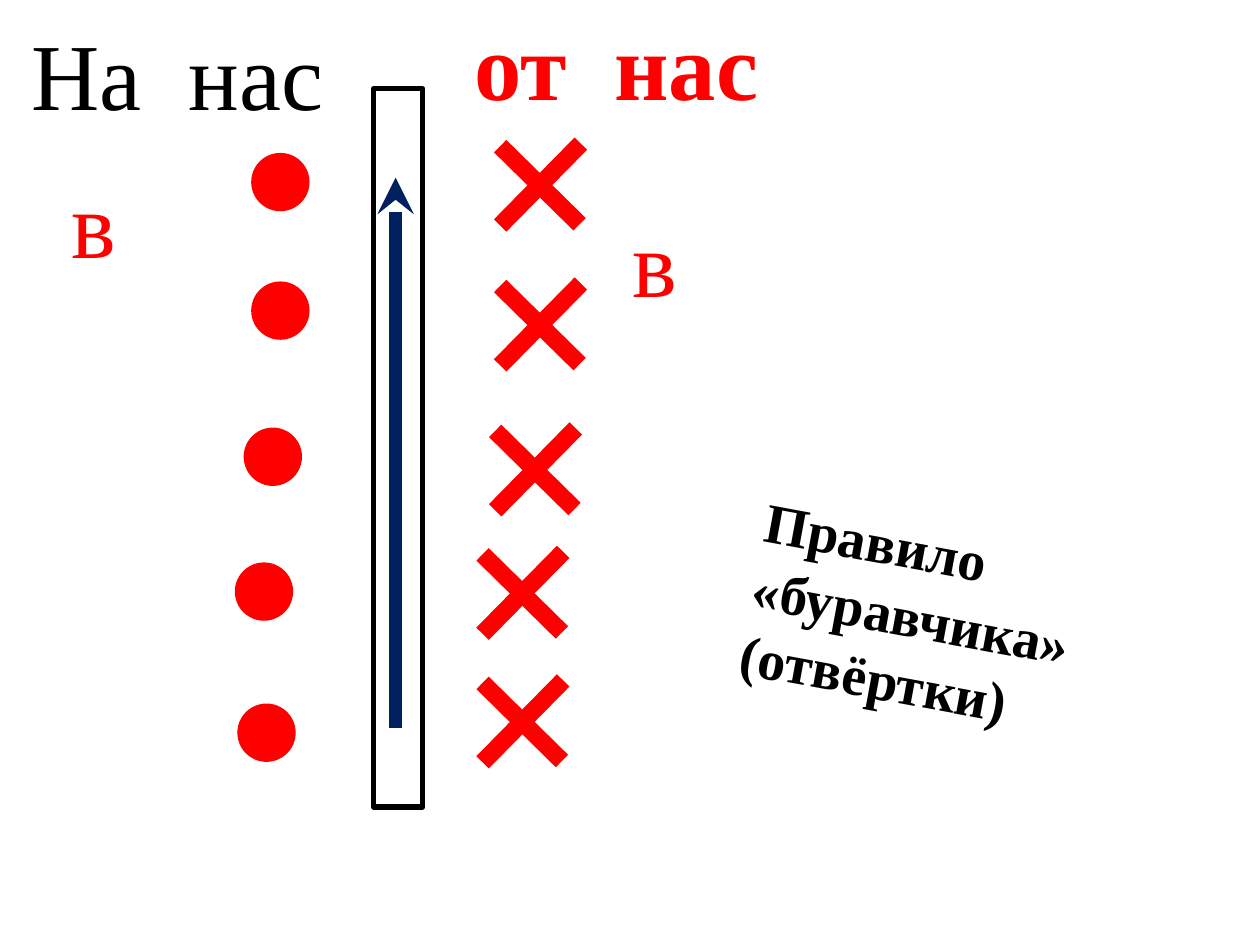
from lxml import etree
from pptx import Presentation
from pptx.dml.color import RGBColor
from pptx.enum.shapes import MSO_CONNECTOR, MSO_SHAPE
from pptx.enum.text import MSO_AUTO_SIZE
from pptx.oxml.ns import qn
from pptx.util import Inches, Pt

STRAIGHT = MSO_CONNECTOR.STRAIGHT
RECTANGLE = MSO_SHAPE.RECTANGLE
OVAL = MSO_SHAPE.OVAL
FIT_SHAPE = MSO_AUTO_SIZE.SHAPE_TO_FIT_TEXT
RED, BLACK, NAVY = "FF0000", "000000", "002060"


def color(value):
    return RGBColor.from_string(value)


def add_line(shapes, start, end, line_color, width):
    line = shapes.add_connector(STRAIGHT, *[Inches(v) for v in (*start, *end)])
    line.line.color.rgb = color(line_color)
    line.line.width = Pt(width)
    etree.SubElement(line._element.spPr, qn("a:effectLst"))
    return line


deck = Presentation()
deck.slide_width, deck.slide_height = Inches(10), Inches(7.5)
page = deck.slides.add_slide(deck.slide_layouts[6])

current = add_line(page.shapes, (3.14, 1.41), (3.14, 5.78), NAVY, 7)
etree.SubElement(current.line._get_or_add_ln(), qn("a:headEnd"), type="stealth")

wire = page.shapes.add_shape(RECTANGLE, Inches(0.31), Inches(3.36), Inches(5.7), Inches(0.39))
wire.rotation = 90
wire.shadow.inherit = False
wire.fill.background()
wire.line.color.rgb = color(BLACK)
wire.line.width = Pt(3)

for left, top in [(2.03, 2.27), (2.03, 1.25), (1.97, 3.43), (1.9, 4.5), (1.92, 5.62)]:
    dot = page.shapes.add_shape(OVAL, Inches(left), Inches(top), Inches(0.39), Inches(0.39))
    dot.shadow.inherit = False
    dot.fill.solid()
    dot.fill.fore_color.rgb = color(RED)
    dot.line.color.rgb = color(RED)
    dot.line.width = Pt(5.25)

for left, top in [(3.97, 1.14), (3.97, 2.25), (3.93, 3.4), (3.83, 4.38), (3.83, 5.4)]:
    cross = page.shapes.add_group_shape()
    add_line(cross.shapes, (left, top + 0.02), (left + 0.63, top + 0.64), RED, 10)
    add_line(cross.shapes, (left, top + 0.65), (left + 0.64, top), RED, 10)

labels = [
    ("в", 0.47, 1.25, 1.17, 1.01, 54, RED, False, 0),
    ("в", 4.92, 1.56, 1.17, 1.01, 54, RED, False, 0),
    ("от  нас", 3.67, 0, 2.58, 1.01, 54, RED, True, 0),
    ("На  нас", 0.15, 0.08, 2.58, 1.01, 54, BLACK, False, 0),
    ("Правило «буравчика» (отвёртки)", 5.86, 4.06, 3.05, 1.72, 32, BLACK, True, 10.6),
]
for text, left, top, width, height, size, text_color, bold, angle in labels:
    box = page.shapes.add_textbox(Inches(left), Inches(top), Inches(width), Inches(height))
    box.rotation = angle
    box.text_frame.word_wrap = True
    box.text_frame.auto_size = FIT_SHAPE
    span = box.text_frame.paragraphs[0].add_run()
    span.text = text
    span.font.name = "Times New Roman"
    span.font.size = Pt(size)
    span.font.bold = bold
    span.font.color.rgb = color(text_color)

deck.save("out.pptx")
